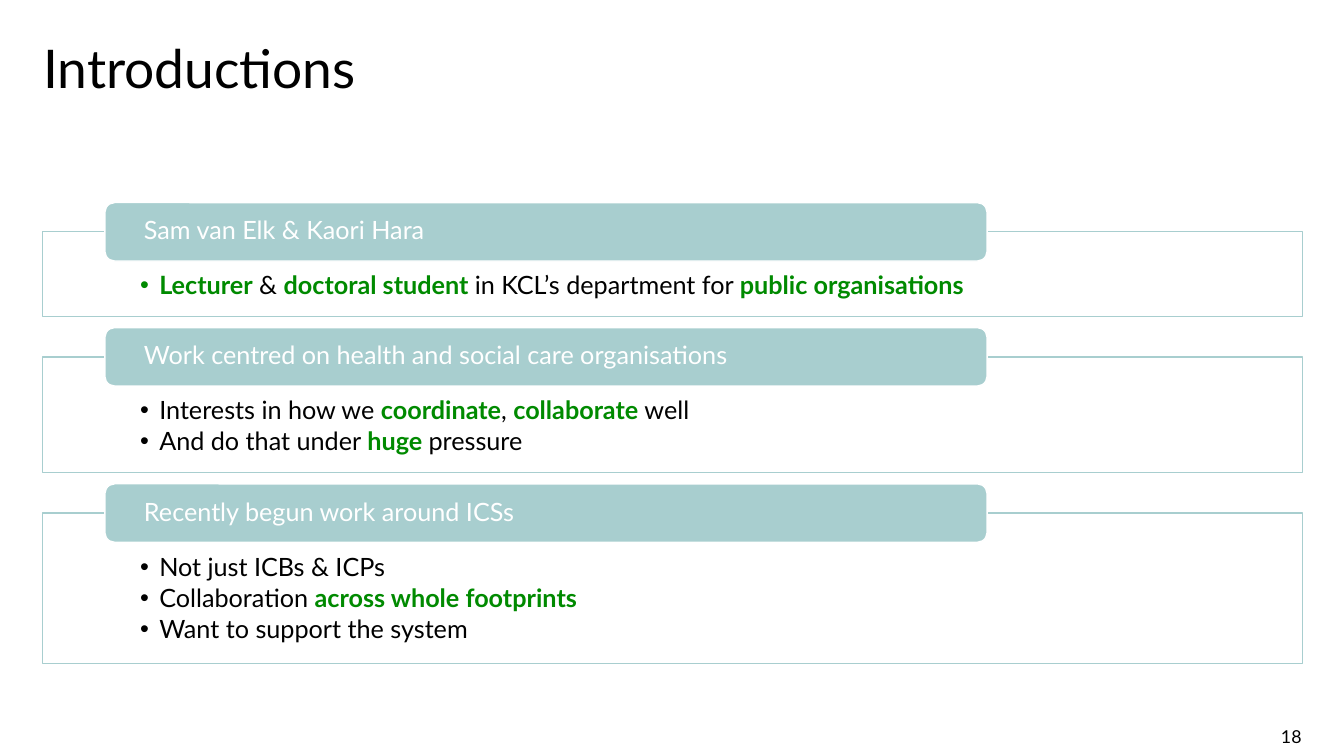
from lxml.etree import SubElement
from pptx import Presentation
from pptx.dml.color import RGBColor
from pptx.enum.shapes import MSO_SHAPE as Preset
from pptx.enum.text import MSO_ANCHOR as Anchor, PP_ALIGN as Align
from pptx.oxml.ns import qn
from pptx.util import Inches, Pt

BLACK = RGBColor(0x00, 0x00, 0x00)
WHITE = RGBColor(0xFF, 0xFF, 0xFF)
TEAL = RGBColor(0xA8, 0xCE, 0xCF)
GREEN = RGBColor(0x00, 0x8A, 0x00)

FONT = "Lato"
FIRST_TOP = 2.3
SECTION_GAP = 0.4
HEADER_RISE = 0.29
HEADER_HEIGHT = 0.58

SECTIONS = [
    ("Sam van Elk & Kaori Hara", 0.84, [
        "*Lecturer* & *doctoral student *in KCL’s department for *public organisations*",
    ]),
    ("Work centred on health and social care organisations", 1.15, [
        "Interests in how we *coordinate*, *collaborate* well",
        "And do that under *huge *pressure",
    ]),
    ("Recently begun work around ICSs", 1.49, [
        "Not just ICBs & ICPs",
        "Collaboration *across whole footprints*",
        "Want to support the system",
    ]),
]


def add_bullet(paragraph):
    properties = paragraph._p.get_or_add_pPr()
    properties.set("marL", str(Inches(0.19)))
    properties.set("indent", str(Inches(-0.19)))
    SubElement(properties, qn("a:buFont"), typeface="Arial")
    SubElement(properties, qn("a:buChar"), char="•")


def write(shape, lines, size=18, color=BLACK, margins=(0, 0, 0, 0), anchor=Anchor.TOP,
          align=Align.LEFT, spacing=0.9, after=0, bulleted=False):
    frame = shape.text_frame
    frame.word_wrap = True
    frame.vertical_anchor = anchor
    (frame.margin_left, frame.margin_top,
     frame.margin_right, frame.margin_bottom) = map(Inches, margins)
    for index, line in enumerate(lines):
        paragraph = frame.add_paragraph() if index else frame.paragraphs[0]
        if bulleted:
            add_bullet(paragraph)
        paragraph.alignment = align
        paragraph.line_spacing = spacing
        paragraph.space_after = Pt(after)
        for position, part in enumerate(line.split("*")):
            if not part:
                continue
            emphasised = position % 2 == 1
            run = paragraph.add_run()
            run.text = part
            run.font.name = FONT
            run.font.size = Pt(size)
            run.font.bold = emphasised
            run.font.color.rgb = GREEN if emphasised else color


def add_label(slide, bounds, text, **style):
    label = slide.shapes.add_textbox(*map(Inches, bounds))
    write(label, [text], **style)


def add_panel(slide, preset, bounds, fill, outline):
    panel = slide.shapes.add_shape(preset, *map(Inches, bounds))
    panel.shadow.inherit = False
    panel.fill.solid()
    panel.fill.fore_color.rgb = fill
    panel.line.color.rgb = outline
    panel.line.width = Pt(1)
    return panel


def add_section(slide, top, height, heading, points):
    body = add_panel(slide, Preset.RECTANGLE, (0.42, top, 12.5, height), WHITE, TEAL)
    write(body, points, margins=(0.97, 0.41, 0.97, 0.14), after=2.7, bulleted=True)
    header = add_panel(slide, Preset.ROUNDED_RECTANGLE,
                       (1.04, top - HEADER_RISE, 8.75, HEADER_HEIGHT), TEAL, WHITE)
    write(header, [heading], color=WHITE, margins=(0.36, 0, 0.36, 0), anchor=Anchor.MIDDLE)


def main():
    deck = Presentation()
    deck.slide_width = Inches(13.33)
    deck.slide_height = Inches(7.5)
    slide = deck.slides.add_slide(deck.slide_layouts[6])

    add_label(slide, (0.43, 0.42, 12.49, 1.08), "Introductions", size=38.1)
    top = FIRST_TOP
    for heading, height, points in SECTIONS:
        add_section(slide, top, height, heading, points)
        top += height + SECTION_GAP
    add_label(slide, (9.91, 7.11, 3, 0.4), "18", size=12.7, margins=(0, 0.05, 0, 0.05),
              anchor=Anchor.MIDDLE, align=Align.RIGHT, spacing=1.0)

    deck.save("out.pptx")


if __name__ == "__main__":
    main()
